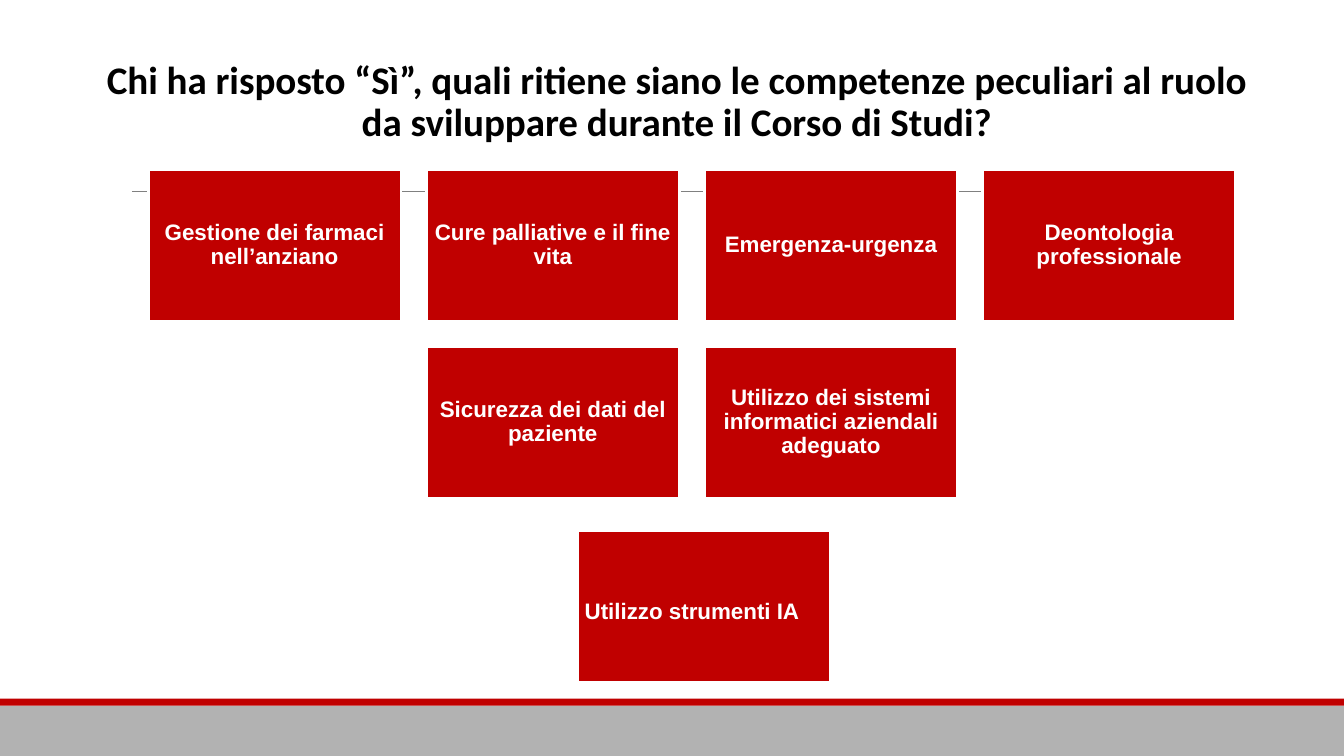
import pptx
import pptx.dml.color
import pptx.enum.shapes
import pptx.enum.text
import pptx.oxml
import pptx.util

Pt = pptx.util.Pt
RGBColor = pptx.dml.color.RGBColor
PP_ALIGN = pptx.enum.text.PP_ALIGN
MSO_ANCHOR = pptx.enum.text.MSO_ANCHOR

RED = RGBColor(0xC0, 0x00, 0x00)
GREY = RGBColor(0xB2, 0xB2, 0xB2)
RULE_GREY = RGBColor(0x80, 0x80, 0x80)
WHITE = RGBColor(0xFF, 0xFF, 0xFF)
BLACK = RGBColor(0x00, 0x00, 0x00)

SLIDE_W, SLIDE_H = 960, 540
BOX_W, BOX_H = 180.7, 108.7
GRID_LEFT, GRID_TOP = 105.8, 121
STEP_X, STEP_Y = 198.7, 126.2

GRID = [
    (0, 0, "Gestione dei farmaci nell’anziano"),
    (0, 1, "Cure palliative e il fine vita"),
    (0, 2, "Emergenza-urgenza"),
    (0, 3, "Deontologia professionale"),
    (1, 1, "Sicurezza dei dati del paziente"),
    (1, 2, "Utilizzo dei sistemi informatici aziendali adeguato"),
]


class SlideBuilder:
    heading_font = "Calibri"
    body_font = "Arial"

    def __init__(self, prs):
        self.slide = prs.slides.add_slide(prs.slide_layouts[5])

    def set_text(self, sp, text, font, size, color, insets):
        tf = sp.text_frame
        tf.word_wrap = True
        tf.auto_size = pptx.enum.text.MSO_AUTO_SIZE.NONE
        tf.vertical_anchor = MSO_ANCHOR.MIDDLE
        tf.margin_left, tf.margin_top, tf.margin_right, tf.margin_bottom = map(Pt, insets)
        p = tf.paragraphs[0]
        p.text = text
        p.alignment = PP_ALIGN.CENTER
        p.line_spacing = 0.9
        p.space_before = Pt(0)
        p.font.name = font
        p.font.size = Pt(size)
        p.font.bold = True
        p.font.color.rgb = color

    def title(self, text, left, top, width, height):
        sp = self.slide.shapes.title
        sp.left, sp.top, sp.width, sp.height = map(Pt, (left, top, width, height))
        self.set_text(sp, text, self.heading_font, 27.9, BLACK, (0, 0, 0, 30))

    def rect(self, left, top, width, height, fill):
        sp = self.slide.shapes.add_shape(
            pptx.enum.shapes.MSO_SHAPE.RECTANGLE, *map(Pt, (left, top, width, height)))
        sp.shadow.inherit = False
        sp.fill.solid()
        sp.fill.fore_color.rgb = fill
        sp.line.fill.background()
        return sp

    def rule(self, x1, x2, y):
        line = self.slide.shapes.add_connector(
            pptx.enum.shapes.MSO_CONNECTOR.STRAIGHT, Pt(x1), Pt(y), Pt(x2), Pt(y))
        line.line.color.rgb = RULE_GREY
        line.line.width = Pt(0.75)
        sp_pr = line._element.spPr
        sp_pr.append(pptx.oxml.parse_xml(
            '<a:effectLst xmlns:a="http://schemas.openxmlformats.org/drawingml/2006/main"/>'))

    def box(self, text, left, top, insets=(4, 4, 4, 4)):
        sp = self.rect(left, top, BOX_W, BOX_H, RED)
        sp.line.color.rgb = WHITE
        sp.line.width = Pt(2)
        self.set_text(sp, text, self.body_font, 16, WHITE, insets)


def main():
    prs = pptx.Presentation()
    prs.slide_width, prs.slide_height = Pt(SLIDE_W), Pt(SLIDE_H)
    s = SlideBuilder(prs)
    s.rect(0, 504, SLIDE_W, 36, GREY)
    s.rect(0, 499, SLIDE_W, 5, RED)
    s.rule(94.3, 879.1, 136.8)
    s.title("Chi ha risposto “Sì”, quali ritiene siano le competenze peculiari al ruolo "
            "da sviluppare durante il Corso di Studi?", 68.4, 43.2, 830.2, 90)
    for row, col, text in GRID:
        s.box(text, GRID_LEFT + col * STEP_X, GRID_TOP + row * STEP_Y)
    s.box("Utilizzo strumenti IA", 412.6, 378.7, insets=(2, 12.6, 19.3, 4))
    prs.save("out.pptx")


if __name__ == "__main__":
    main()
